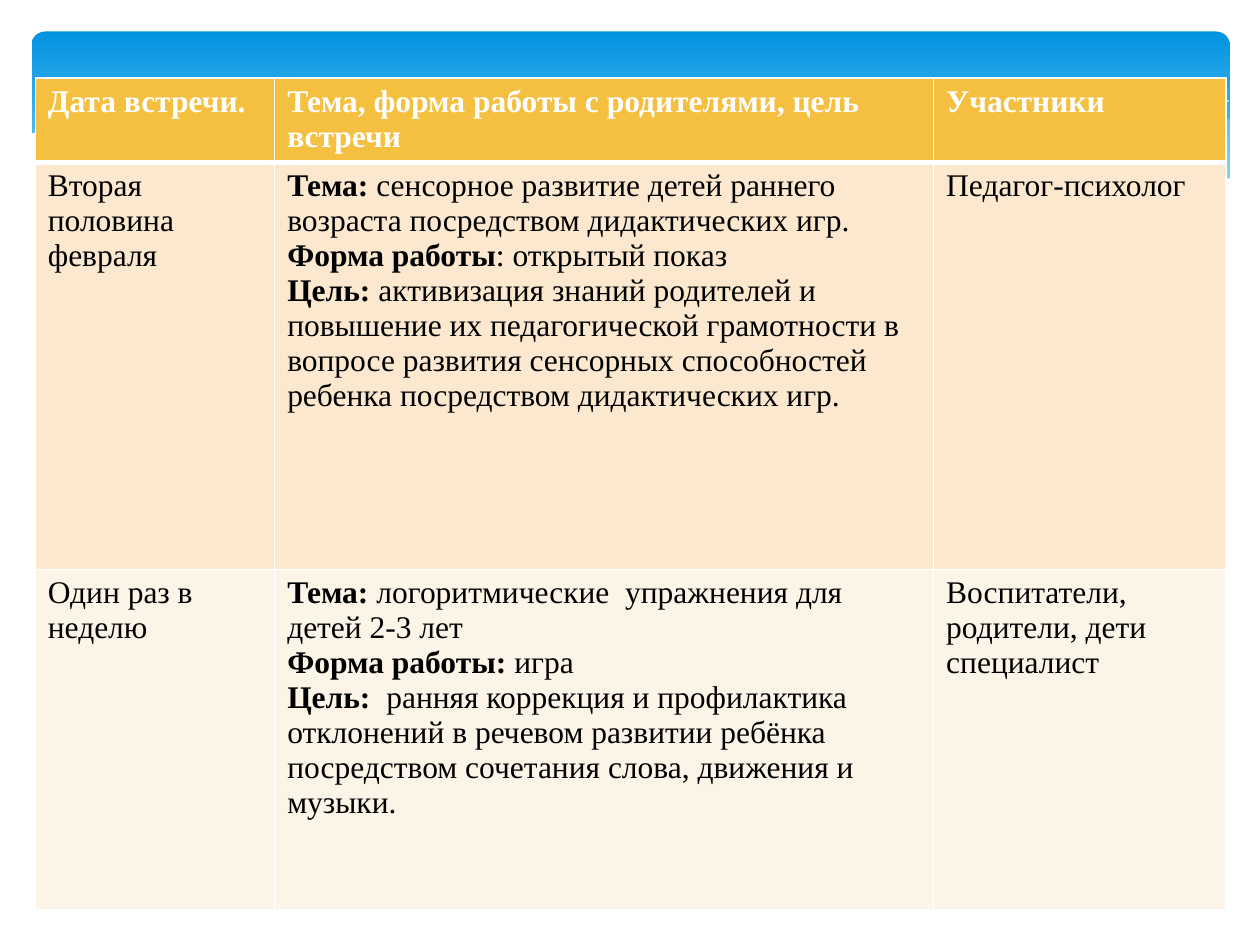
from dataclasses import dataclass
from typing import Optional

from lxml.etree import SubElement
from pptx import Presentation
from pptx.dml.color import RGBColor as RGB
from pptx.enum.shapes import MSO_SHAPE as Kind
from pptx.oxml.ns import qn
from pptx.util import Inches, Pt

WHITE = RGB(0xFF, 0xFF, 0xFF)
BLACK = RGB(0x00, 0x00, 0x00)
DEEP = RGB(0x02, 0x93, 0xE0)
LIGHT = RGB(0x83, 0xD3, 0xFE)
PALE = RGB(0xC6, 0xE7, 0xFC)
GOLD = RGB(0xF5, 0xC0, 0x40)
PEACH = RGB(0xFB, 0xE8, 0xCF)
CREAM = RGB(0xFD, 0xF4, 0xE8)
FONT = "Times New Roman"


@dataclass
class Wave:
    points: list[tuple[float, float]]
    fill: Optional[RGB] = None
    alpha: int = 100


@dataclass
class Line:
    text: str
    head: str = ""


@dataclass
class Row:
    height: float
    fill: RGB
    ink: RGB
    cells: list[list[Line]]
    bold: bool = False
    base: float = 1


WAVES = [
    Wave([(9.76, 0.94), (9.35, 1.01), (8.91, 1.1), (8.32, 1.25), (7.53, 1.43),
          (6.61, 1.6), (7.19, 1.67), (7.81, 1.72), (8.35, 1.72), (8.81, 1.67),
          (9.28, 1.58), (9.63, 1.47), (9.76, 1.41)], PALE, 29),
    Wave([(8.93, 1.67), (8.37, 1.59), (7.75, 1.49), (7.06, 1.34), (6.29, 1.16),
          (5.55, 1), (4.89, 0.89), (4.2, 0.82), (3.61, 0.8), (2.86, 0.86),
          (3.62, 0.97), (4.49, 1.16), (5.3, 1.35), (6.18, 1.53), (6.95, 1.65),
          (7.61, 1.71), (8.18, 1.73), (8.67, 1.7)], PALE, 40),
    Wave([(3.09, 0.9), (3.44, 0.84), (4.16, 0.81), (4.89, 0.84), (5.56, 0.91),
          (6.36, 1.03), (7.27, 1.2), (8.31, 1.45), (9.07, 1.66)]),
    Wave([(6.13, 1.51), (6.95, 1.3), (7.76, 1.11), (8.66, 0.93), (9.24, 0.84),
          (9.75, 0.8)]),
    Wave([(9.77, 1.41), (9.4, 1.54), (8.99, 1.64), (8.5, 1.7), (7.93, 1.71),
          (7.26, 1.67), (6.48, 1.56), (5.55, 1.39), (4.47, 1.14), (3.65, 0.96),
          (2.92, 0.85), (2.3, 0.79), (1.77, 0.78), (1.32, 0.81), (0.85, 0.87),
          (0.52, 0.96), (0.23, 1.07), (0.23, 2.24), (9.77, 2.24)], WHITE),
]

COLS = [1.9, 5.23, 2.32]
ROWS = [
    Row(0.67, GOLD, WHITE, [
        [Line("Дата встречи.")],
        [Line("Тема, форма работы с родителями, цель встречи")],
        [Line("Участники")],
    ], bold=True, base=3),
    Row(3.23, PEACH, BLACK, [
        [Line("Вторая половина февраля")],
        [Line("сенсорное развитие детей раннего возраста посредством "
              "дидактических игр.", "Тема: "),
         Line(": открытый показ", "Форма работы"),
         Line("активизация знаний родителей и повышение их педагогической "
              "грамотности в вопросе развития сенсорных способностей "
              "ребенка посредством дидактических игр.", "Цель: ")],
        [Line("Педагог-психолог")],
    ]),
    Row(2.7, CREAM, BLACK, [
        [Line("Один раз в неделю")],
        [Line("логоритмические  упражнения для детей 2-3 лет", "Тема: "),
         Line("игра", "Форма работы: "),
         Line("ранняя коррекция и профилактика отклонений в речевом развитии "
              "ребёнка посредством сочетания слова, движения и музыки. ",
              "Цель:  ")],
        [Line("Воспитатели, родители, дети"), Line("специалист")],
    ]),
]


def draw_band(slide) -> None:
    band = slide.shapes.add_shape(
        Kind.ROUNDED_RECTANGLE, Inches(0.25), Inches(0.25), Inches(9.51), Inches(1.56))
    band.adjustments[0] = 0.07
    band.shadow.inherit = False
    band.line.fill.background()
    band.fill.gradient()
    band.fill.gradient_angle = 270
    for stop, place, tint in zip(band.fill.gradient_stops, (0, 0.9), (DEEP, LIGHT)):
        stop.position = place
        stop.color.rgb = tint


def draw_wave(slide, wave: Wave) -> None:
    points = [(Inches(x), Inches(y)) for x, y in wave.points]
    path = slide.shapes.build_freeform(*points[0])
    path.add_line_segments(points[1:], close=wave.fill is not None)
    shape = path.convert_to_shape()
    shape.shadow.inherit = False
    if wave.fill is None:
        shape.fill.background()
        shape.line.color.rgb = WHITE
        shape.line.width = Pt(0)
        return
    shape.line.fill.background()
    shape.fill.solid()
    shape.fill.fore_color.rgb = wave.fill
    if wave.alpha < 100:
        tint = shape.element.spPr.find(qn("a:solidFill"))[0]
        SubElement(tint, qn("a:alpha"), val=str(wave.alpha * 1000))


def add_edges(cell, top: float, base: float) -> None:
    props = cell._tc.get_or_add_tcPr()
    for side, width in (("L", 1), ("R", 1), ("T", top), ("B", base)):
        edge = SubElement(props, qn(f"a:ln{side}"), w=str(Pt(width)))
        fill = SubElement(edge, qn("a:solidFill"))
        SubElement(fill, qn("a:srgbClr"), val=str(WHITE))


def fill_cell(cell, lines: list[Line], row: Row) -> None:
    frame = cell.text_frame
    for i, line in enumerate(lines):
        para = frame.add_paragraph() if i else frame.paragraphs[0]
        for text, bold in ((line.head, True), (line.text, row.bold)):
            if text:
                run = para.add_run()
                run.text = text
                font = run.font
                font.name, font.size, font.bold = FONT, Pt(18), bold
                font.color.rgb = row.ink
    cell.fill.solid()
    cell.fill.fore_color.rgb = row.fill


def draw_table(slide) -> None:
    high = sum(row.height for row in ROWS)
    table = slide.shapes.add_table(
        len(ROWS), len(COLS), Inches(0.28), Inches(0.62),
        Inches(sum(COLS)), Inches(high)).table
    for col, width in zip(table.columns, COLS):
        col.width = Inches(width)
    top = 1
    for r, row in enumerate(ROWS):
        table.rows[r].height = Inches(row.height)
        for c, lines in enumerate(row.cells):
            cell = table.cell(r, c)
            add_edges(cell, top, row.base)
            fill_cell(cell, lines, row)
        top = row.base


def main() -> None:
    deck = Presentation()
    deck.slide_width, deck.slide_height = Inches(10), Inches(7.5)
    slide = deck.slides.add_slide(deck.slide_layouts[6])
    draw_band(slide)
    for wave in WAVES:
        draw_wave(slide, wave)
    draw_table(slide)
    deck.save("out.pptx")


if __name__ == "__main__":
    main()
